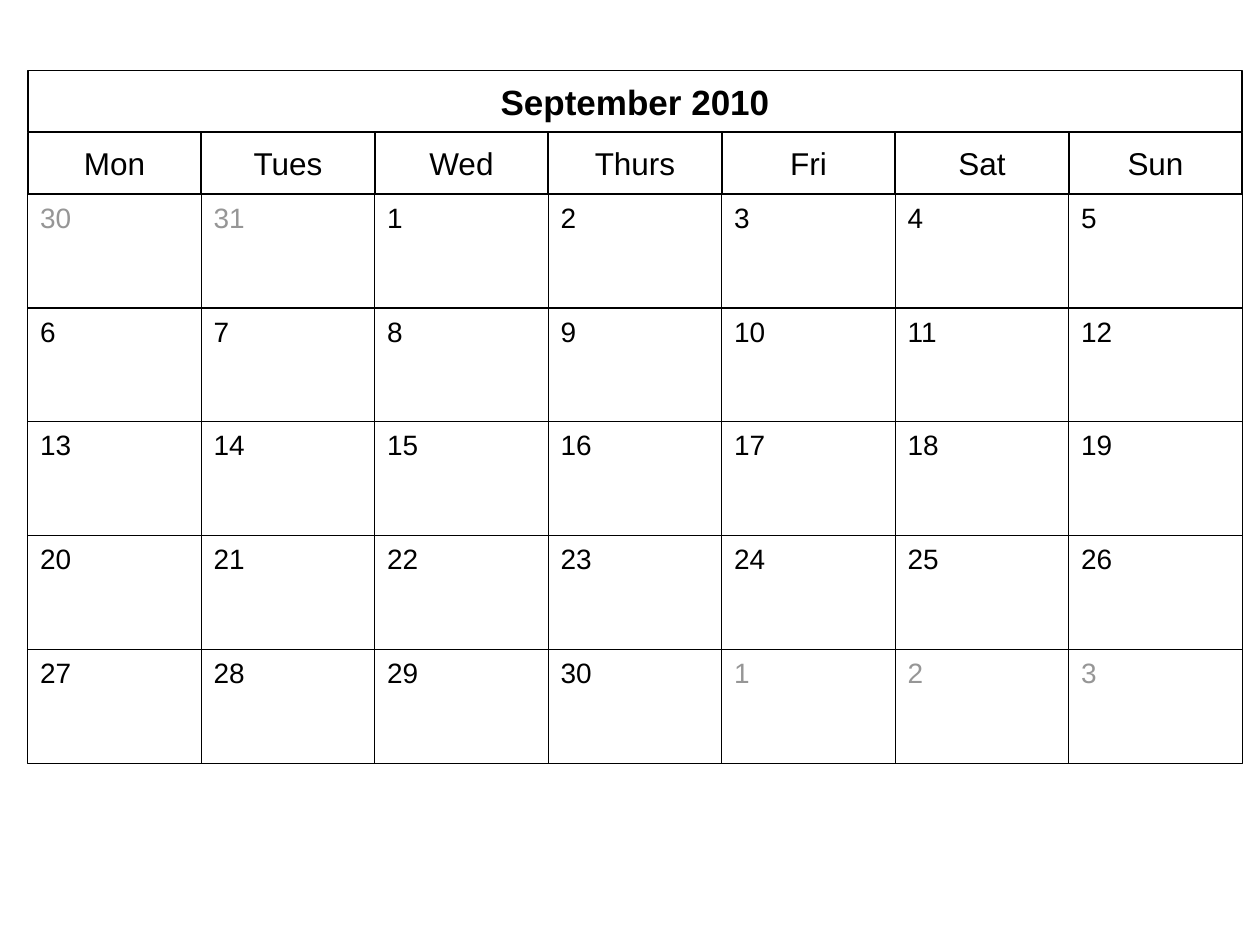
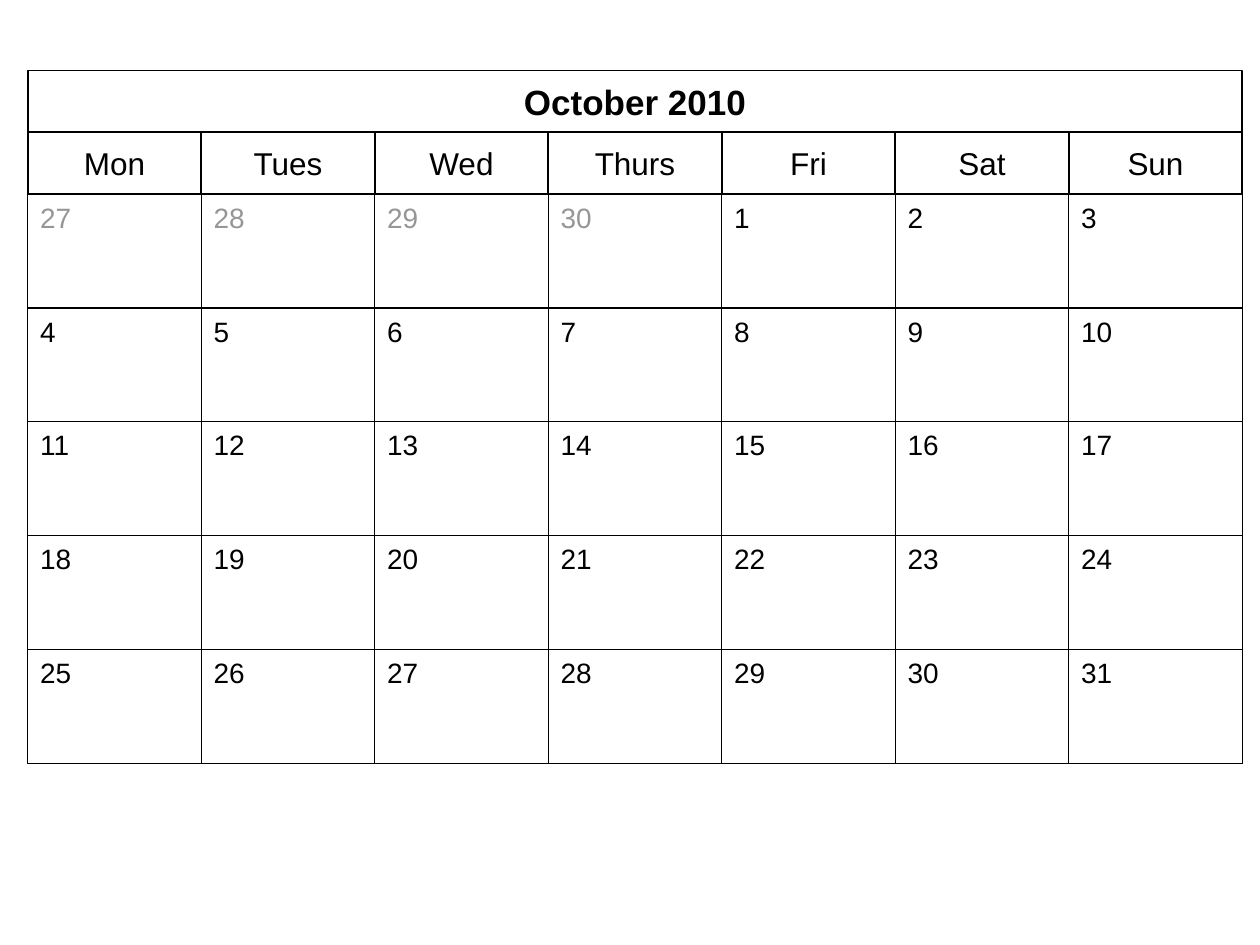
from pptx import Presentation
from pptx.dml.color import RGBColor
from pptx.enum.shapes import MSO_SHAPE as Shape
from pptx.enum.text import MSO_ANCHOR as Anchor, PP_ALIGN as Align
from pptx.util import Inches, Pt

FONT = "Arial"
BLACK, WHITE, GREY = "000000", "FFFFFF", "969696"
WEEKDAYS = ["Mon", "Tues", "Wed", "Thurs", "Fri", "Sat", "Sun"]
WEEKS = 5
LEFT, TOP, WIDTH = 0.22, 0.56, 9.64
BAND_HEIGHT, WEEK_HEIGHT = 0.49, 0.904
DAY_WIDTH = WIDTH / len(WEEKDAYS)
WEEKS_TOP = TOP + 2 * BAND_HEIGHT

# Title, days in the previous month, its shown days before the 1st, days in this month
MONTHS = [
    ("September 2010", 31, 2, 30),
    ("October 2010", 30, 4, 31),
]


def colour(value):
    """Turn a hex string into a colour."""
    return RGBColor.from_string(value)


def add_box(slide, text, left, top, width, height, size, ink=BLACK, border=0.75):
    """Add an outlined rectangle with one line of text and return it."""
    box = slide.shapes.add_shape(
        Shape.RECTANGLE, Inches(left), Inches(top), Inches(width), Inches(height)
    )
    box.shadow.inherit = False
    box.fill.background()
    box.line.color.rgb = colour(BLACK)
    box.line.width = Pt(border)
    frame = box.text_frame
    frame.text = text
    frame.word_wrap = True
    frame.vertical_anchor = Anchor.TOP
    line = frame.paragraphs[0]
    line.alignment = Align.LEFT
    font = line.runs[0].font
    font.name, font.size = FONT, Pt(size)
    font.color.rgb = colour(ink)
    return box


def add_heading(slide, text, left, top, width, size, bold=False):
    """Add a white heading box with centred text."""
    heading = add_box(slide, text, left, top, width, BAND_HEIGHT, size, border=1)
    heading.fill.solid()
    heading.fill.fore_color.rgb = colour(WHITE)
    frame = heading.text_frame
    frame.vertical_anchor = Anchor.MIDDLE
    frame.margin_top = frame.margin_bottom = Inches(0.02)
    frame.paragraphs[0].alignment = Align.CENTER
    frame.paragraphs[0].runs[0].font.bold = bold


def month_days(previous_length, lead, length):
    """List the day number and text colour of every cell in the month grid."""
    before = range(previous_length - lead + 1, previous_length + 1)
    after = range(1, WEEKS * len(WEEKDAYS) - lead - length + 1)
    return (
        [(day, GREY) for day in before]
        + [(day, BLACK) for day in range(1, length + 1)]
        + [(day, GREY) for day in after]
    )


def add_month(slide, title, previous_length, lead, length):
    """Draw the calendar of one month."""
    for column, weekday in enumerate(WEEKDAYS):
        left = LEFT + column * DAY_WIDTH
        add_heading(slide, weekday, left, TOP + BAND_HEIGHT, DAY_WIDTH, 18)
    add_heading(slide, title, LEFT, TOP, WIDTH, 20, bold=True)
    for cell, (day, ink) in enumerate(month_days(previous_length, lead, length)):
        week, column = divmod(cell, len(WEEKDAYS))
        left = LEFT + column * DAY_WIDTH
        top = WEEKS_TOP + week * WEEK_HEIGHT
        add_box(slide, str(day), left, top, DAY_WIDTH, WEEK_HEIGHT, 16, ink)


def main():
    """Build one calendar slide for each month."""
    deck = Presentation()
    deck.slide_width, deck.slide_height = Inches(10), Inches(7.5)
    for month in MONTHS:
        add_month(deck.slides.add_slide(deck.slide_layouts[6]), *month)
    deck.save("out.pptx")


if __name__ == "__main__":
    main()
